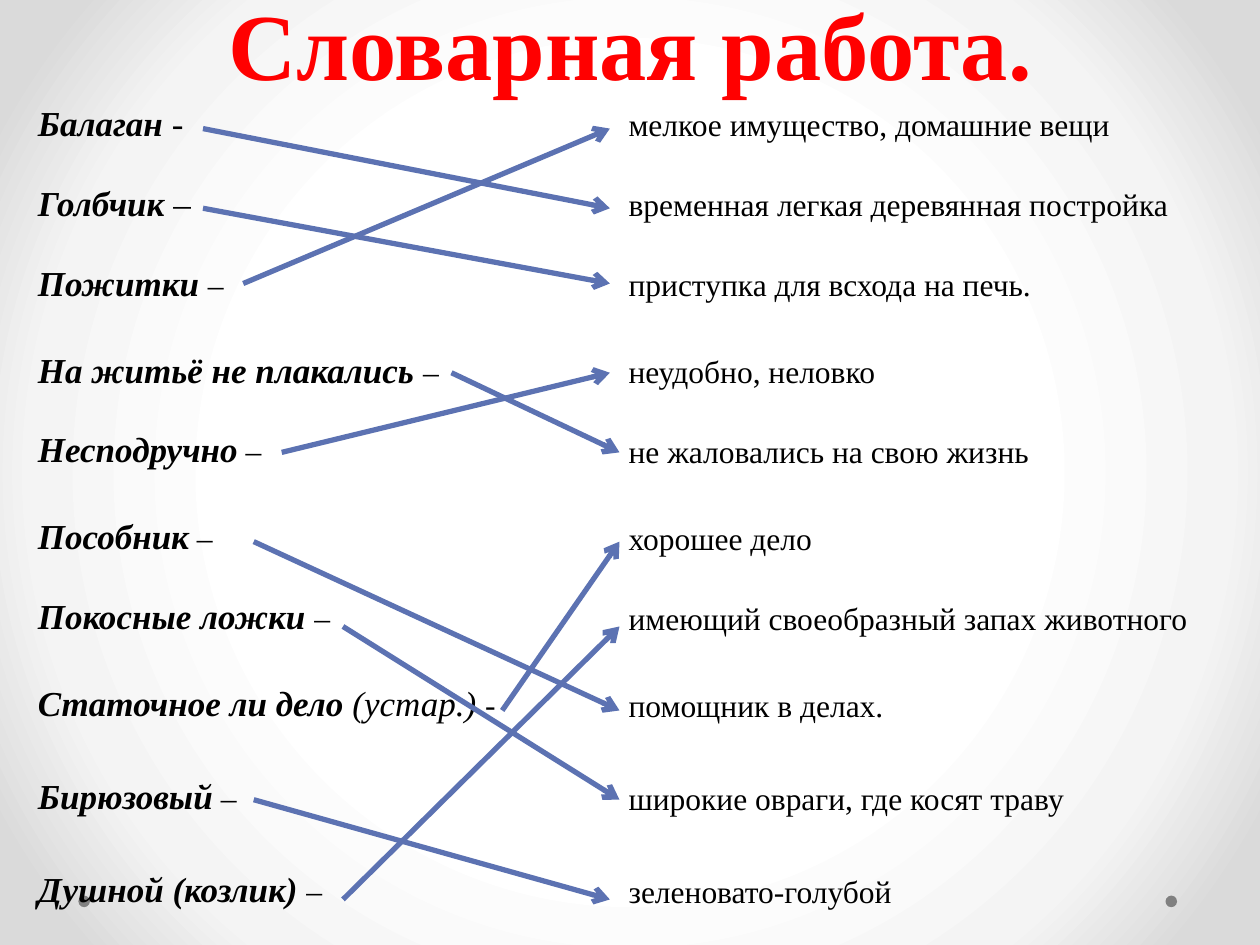
import pptx
import pptx.dml.color
import pptx.enum.shapes
import pptx.enum.text
import pptx.oxml
import pptx.oxml.ns
import pptx.util

Pt = pptx.util.Pt

# Content: term, italic part, dash, definition, row centre, arrow start, row of the matching definition
TITLE = "Словарная работа."
ROWS = [
    ("Балаган ", "-", "", "мелкое имущество, домашние вещи", 73.5, 116, 1),
    ("Голбчик", " –", "", "временная легкая деревянная постройка", 119, 116, 2),
    ("Пожитки ", "", "–", "приступка для всхода на печь.", 162, 139, 0),
    ("На житьё не плакались ", "", "–", "неудобно, неловко", 213, 258, 4),
    ("Несподручно", "", " –", "не жаловались на свою жизнь", 258.5, 161, 3),
    ("Пособник", "", " –", "хорошее дело", 309.5, 145, 7),
    ("Покосные ложки ", "", "–", "имеющий своеобразный запах животного", 358, 196, 8),
    ("Статочное ли дело ", "(устар.) ", "-", "помощник в делах.", 406, 287, 5),
    ("Бирюзовый", "", " –", "широкие овраги, где косят траву", 457, 145, 9),
    ("Душной (козлик) ", "", "–", "зеленовато-голубой", 514, 196, 6),
]
ROW_GAPS = [0, 45.7, 45.7, 49.7, 45.3, 49.7, 45.7, 49.7, 53.1, 53.1]
ARROW_ENDS = [348.5] * 4 + [354] * 5 + [348.5]
LINE_HEIGHT = 24
DOT_LEFTS = [44.8, 666]
BACKGROUND_STOPS = [(50, "FFFFFF"), (76, "F4F4F4"), (92, "DADADA")]
FONT = "Times New Roman"


def color(hex_string):
    return pptx.dml.color.RGBColor.from_string(hex_string)


def element(tag, attributes="", children=""):
    namespace = pptx.oxml.ns.nsdecls("a")
    return pptx.oxml.parse_xml(f"<a:{tag} {namespace} {attributes}>{children}</a:{tag}>")


def place(shape, left, top, width, height):
    shape.left, shape.top, shape.width, shape.height = map(Pt, (left, top, width, height))


def style(run, size, hex_string, bold=False, italic=False):
    font = run.font
    font.name, font.size, font.bold, font.italic = FONT, Pt(size), bold, italic
    font.color.rgb = color(hex_string)


def set_background(slide):
    slide.background.fill.gradient()
    gradient = slide.element.find(".//" + pptx.oxml.ns.qn("a:gradFill"))
    stops = "".join(
        f'<a:gs pos="{position * 1000}"><a:srgbClr val="{value}"/></a:gs>'
        for position, value in BACKGROUND_STOPS
    )
    center = '<a:fillToRect l="50000" t="50000" r="50000" b="50000"/>'
    gradient.getparent().replace(gradient, element(
        "gradFill", 'rotWithShape="1"',
        f'<a:gsLst>{stops}</a:gsLst><a:path path="circle">{center}</a:path>'))


def add_dot(slide, left):
    dot = slide.shapes.add_shape(
        pptx.enum.shapes.MSO_SHAPE.OVAL, Pt(left), Pt(511.8), Pt(6.6), Pt(6.6))
    dot.shadow.inherit = False
    dot.fill.solid()
    dot.fill.fore_color.rgb = color("808080")
    dot.line.fill.background()
    # Keep the dots behind the text
    dot.element.getparent().insert(2, dot.element)


def fill_title(title):
    place(title, 36, 0, 648, 60.5)
    frame = title.text_frame
    frame.text = TITLE
    frame.auto_size = pptx.enum.text.MSO_AUTO_SIZE.NONE
    frame.vertical_anchor = pptx.enum.text.MSO_ANCHOR.BOTTOM
    paragraph = frame.paragraphs[0]
    paragraph.alignment = pptx.enum.text.PP_ALIGN.CENTER
    paragraph.line_spacing = Pt(58)
    style(paragraph.runs[0], 54, "FF0000", bold=True)


def fill_column(body, lines):
    """Write one paragraph per row; each line is a list of (text, size, bold, italic)."""
    frame = body.text_frame
    frame.auto_size = pptx.enum.text.MSO_AUTO_SIZE.NONE
    frame.vertical_anchor = pptx.enum.text.MSO_ANCHOR.TOP
    for index, (line, gap) in enumerate(zip(lines, ROW_GAPS)):
        paragraph = frame.add_paragraph() if index else frame.paragraphs[0]
        paragraph.line_spacing = Pt(LINE_HEIGHT)
        paragraph.space_before = Pt(max(gap - LINE_HEIGHT, 0))
        paragraph.space_after = Pt(0)
        properties = paragraph._p.get_or_add_pPr()
        properties.set("marL", "0")
        properties.set("indent", "0")
        properties.append(element("buNone"))
        for text, size, bold, italic in line:
            if text:
                run = paragraph.add_run()
                run.text = text
                style(run, size, "000000", bold, italic)


def add_arrow(slide, start_x, start_y, end_x, end_y):
    arrow = slide.shapes.add_connector(
        pptx.enum.shapes.MSO_CONNECTOR.STRAIGHT, *map(Pt, (start_x, start_y, end_x, end_y)))
    arrow.line.color.rgb = color("5C72B2")
    arrow.line.width = Pt(3)
    arrow.line._get_or_add_ln().append(element("tailEnd", 'type="arrow"'))
    arrow.element.spPr.append(element("effectLst"))


def main():
    presentation = pptx.Presentation()
    presentation.slide_width, presentation.slide_height = Pt(720), Pt(540)
    slide = presentation.slides.add_slide(presentation.slide_layouts[3])

    # Background and decoration
    set_background(slide)
    for left in DOT_LEFTS:
        add_dot(slide, left)

    # Title, terms on the left, definitions on the right
    fill_title(slide.shapes.title)
    terms, definitions = slide.placeholders[1], slide.placeholders[2]
    place(terms, 14.4, 54.2, 330, 476.6)
    place(definitions, 352, 54.2, 354, 476.6)
    fill_column(terms, [
        [(term, 20, True, True), (note, 20, False, True), (dash, 18, False, False)]
        for term, note, dash, *_ in ROWS])
    fill_column(definitions, [[(row[3], 18, False, False)] for row in ROWS])

    # Arrows from each term to its definition
    centers = [row[4] for row in ROWS]
    for *_, center, start, target in ROWS:
        add_arrow(slide, start, center, ARROW_ENDS[target], centers[target])

    presentation.save("out.pptx")


if __name__ == "__main__":
    main()
